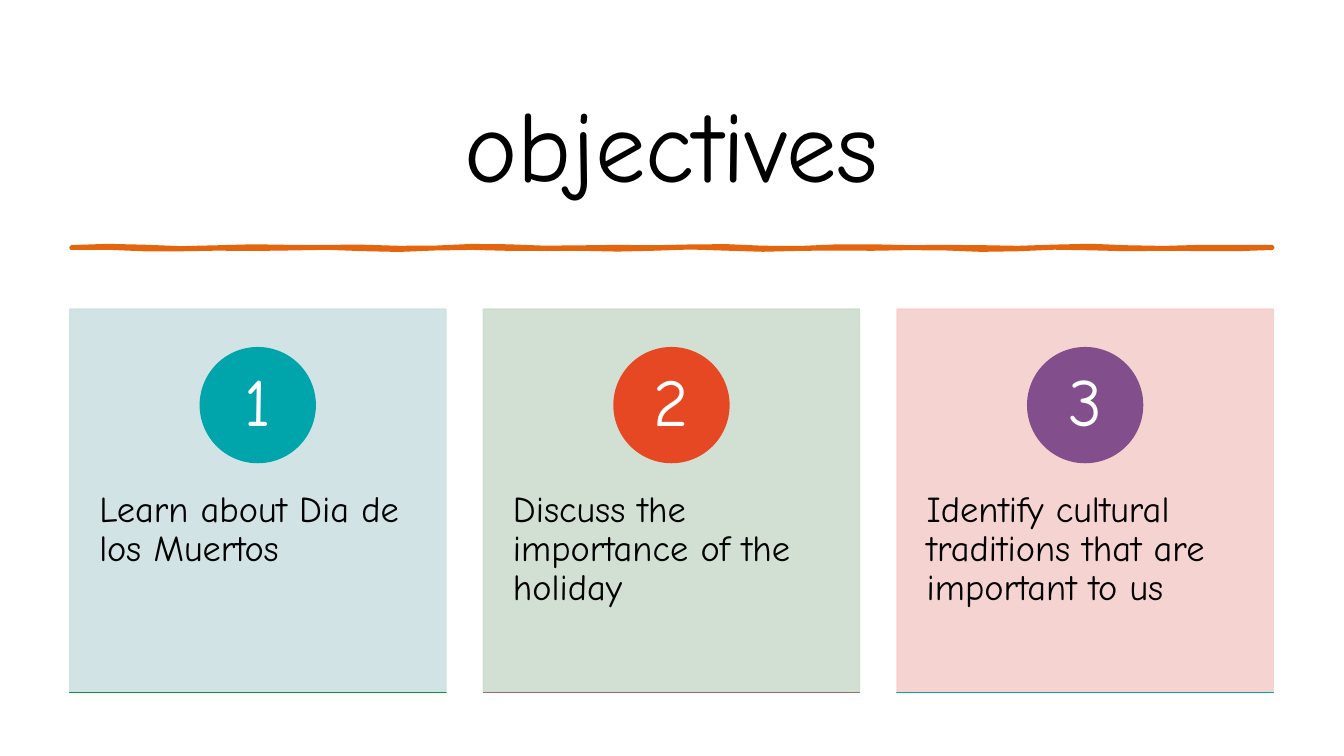
import math
import pptx
import pptx.util
import pptx.dml.color
import pptx.enum.shapes
import pptx.enum.text
import pptx.oxml
import pptx.oxml.ns

Pt = pptx.util.Pt
RGB = pptx.dml.color.RGBColor
SHAPE = pptx.enum.shapes.MSO_SHAPE
ALIGN = pptx.enum.text.PP_ALIGN
ANCHOR = pptx.enum.text.MSO_ANCHOR

FONT = "Comic Neue"
BLACK = RGB(0x00, 0x00, 0x00)
WHITE = RGB(0xFF, 0xFF, 0xFF)
ORANGE = RGB(0xE4, 0x65, 0x0E)
BLUE = RGB(0xCC, 0xE1, 0xE2)
SAGE = RGB(0xCC, 0xDD, 0xCE)
PINK = RGB(0xF5, 0xCF, 0xCD)
TEAL = RGB(0x00, 0xA5, 0xAB)
RED = RGB(0xE6, 0x48, 0x23)
PURPLE = RGB(0x82, 0x4F, 0x8C)
GREEN = RGB(0x09, 0x96, 0x3B)
MAUVE = RGB(0x9C, 0x6A, 0x6A)

PAGE = (0, 0, 960, 540)
LEFT = 49.8
WIDTH = 268.7
STEP = 295.5
TOP = 220.8
HEIGHT = 273.7
DISC = 82.1
BADGE = 58.3

CARDS = [
    ("Learn about Dia de los Muertos", BLUE, TEAL, GREEN),
    ("Discuss the importance of the holiday", SAGE, RED, MAUVE),
    ("Identify cultural traditions that are important to us", PINK, PURPLE, TEAL),
]


def add_text(slide, box, words, size, color, align, anchor, inset, space=1.0):
    frame = slide.shapes.add_textbox(*map(Pt, box)).text_frame
    frame.word_wrap = True
    frame.vertical_anchor = anchor
    frame.margin_left = frame.margin_right = Pt(inset[0])
    frame.margin_top = frame.margin_bottom = Pt(inset[1])
    para = frame.paragraphs[0]
    para.alignment = align
    para.line_spacing = space
    run = para.add_run()
    run.text = words
    run.font.name = FONT
    run.font.size = Pt(size)
    run.font.color.rgb = color


def paint(shape, color, width):
    shape.shadow.inherit = False
    shape.fill.solid()
    shape.fill.fore_color.rgb = color
    if width:
        shape.line.color.rgb = color
        shape.line.width = Pt(width)
    else:
        shape.line.fill.background()


def fade(shape, share):
    for node in shape._element.spPr.iter(pptx.oxml.ns.qn("a:srgbClr")):
        alpha = pptx.oxml.parse_xml(
            "<a:alpha %s/>" % pptx.oxml.ns.nsdecls("a"))
        alpha.set("val", str(share * 1000))
        node.append(alpha)


def add_shape(slide, kind, box, color, width=1):
    shape = slide.shapes.add_shape(kind, *map(Pt, box))
    paint(shape, color, width)
    return shape


def wave(x, base, phase):
    swell = math.sin(x / 17 + phase) * math.sin(x / 71 + phase)
    return Pt(x), Pt(base + 0.9 * swell)


def add_stroke(slide, left, right, top, color):
    xs = range(left, right + 1, 26)
    upper = [wave(x, top, 0) for x in xs]
    lower = [wave(x, top + 1.4, 0.8) for x in reversed(xs)]
    build = slide.shapes.build_freeform(*upper[0])
    build.add_line_segments(upper[1:] + lower)
    paint(build.convert_to_shape(), color, 2.75)


def add_card(slide, index, words, back, tint, edge):
    left = LEFT + index * STEP
    mid = left + WIDTH / 2
    center = TOP + 68.6
    card = add_shape(slide, SHAPE.RECTANGLE, (left, TOP, WIDTH, HEIGHT), back)
    fade(card, 90)
    add_text(slide, (left, 324.8, WIDTH, 164.2), words, 26, BLACK,
             ALIGN.LEFT, ANCHOR.TOP, (21.1, 25.9), 0.9)
    add_shape(slide, SHAPE.OVAL,
              (mid - DISC / 2, center - DISC / 2, DISC, DISC), tint)
    add_text(slide, (mid - BADGE / 2, center - BADGE / 2 - 0.5, BADGE, BADGE),
             str(index + 1), 48, WHITE, ALIGN.CENTER, ANCHOR.MIDDLE,
             (6.5, 0.7), 0.9)
    add_shape(slide, SHAPE.RECTANGLE, (left, TOP + HEIGHT, WIDTH, 0), edge)


def main():
    deck = pptx.Presentation()
    deck.slide_width = Pt(PAGE[2])
    deck.slide_height = Pt(PAGE[3])
    slide = deck.slides.add_slide(deck.slide_layouts[6])
    add_shape(slide, SHAPE.RECTANGLE, PAGE, WHITE, 0)
    add_text(slide, (LEFT, 49.7, 859.7, 103.7), "objectives", 72, BLACK,
             ALIGN.CENTER, ANCHOR.MIDDLE, (7.2, 3.6))
    add_stroke(slide, 51, 909, 176.4, ORANGE)
    for index, card in enumerate(CARDS):
        add_card(slide, index, *card)
    deck.save("out.pptx")


if __name__ == "__main__":
    main()
